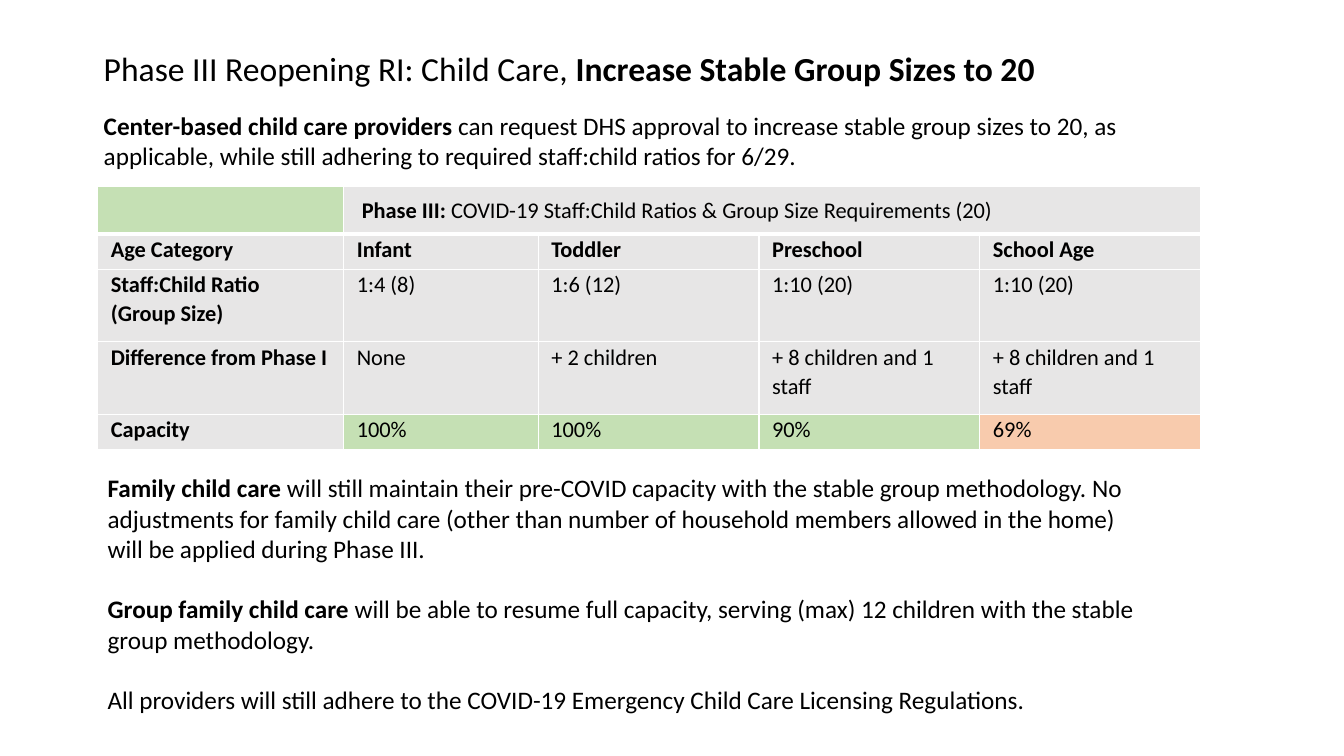
import pptx
import pptx.dml.color
import pptx.oxml
import pptx.oxml.ns
import pptx.util

Pt = pptx.util.Pt

GREEN = "C5E0B4"
GRAY = "E7E6E6"
ORANGE = "F8CBAD"
WHITE = "FFFFFF"
BLACK = "000000"

COLUMN_WIDTHS = [175.7, 139, 157.7, 157.7, 157.7]
ROW_HEIGHTS = [29.5, 25.2, 51.8, 51.8, 25.2]
RATIO_ROWS = [
    ["Age Category", "Infant", "Toddler", "Preschool", "School Age"],
    ["Staff:Child Ratio\n(Group Size)", "1:4 (8)", "1:6 (12)", "1:10 (20)", "1:10 (20)"],
    ["Difference from Phase I", "None", "+ 2 children",
     "+ 8 children and 1 staff", "+ 8 children and 1 staff"],
    ["Capacity", "100%", "100%", "90%", "69%"],
]
CAPACITY_FILLS = [GRAY, GREEN, GREEN, GREEN, ORANGE]


def color(value):
    return pptx.dml.color.RGBColor.from_string(value)


def add_run(paragraph, text, size=18, bold=False, fill=BLACK, font="Calibri"):
    run = paragraph.add_run()
    run.text = text
    run.font.name = font
    run.font.size = Pt(size)
    run.font.bold = bold
    run.font.color.rgb = color(fill)


def write_paragraphs(frame, paragraphs, size, line_spacing=None, gap=0):
    for index, runs in enumerate(paragraphs):
        paragraph = frame.add_paragraph() if index else frame.paragraphs[0]
        if line_spacing:
            paragraph.line_spacing = line_spacing
        if index and gap:
            paragraph.space_before = Pt(gap)
        for text, bold in runs:
            add_run(paragraph, text, size=size, bold=bold)


def add_text(slide, left, top, width, height, paragraphs, size=18, gap=0):
    shape = slide.shapes.add_textbox(Pt(left), Pt(top), Pt(width), Pt(height))
    shape.text_frame.word_wrap = True
    write_paragraphs(shape.text_frame, paragraphs, size, gap=gap)


def set_borders(cell, bottom_width):
    properties = cell._tc.get_or_add_tcPr()
    widths = {"lnL": 1, "lnR": 1, "lnT": 1, "lnB": bottom_width}
    for position, (side, width) in enumerate(widths.items()):
        border = pptx.oxml.parse_xml(
            f'<a:{side} {pptx.oxml.ns.nsdecls("a")} w="{Pt(width)}">'
            f'<a:solidFill><a:srgbClr val="{WHITE}"/></a:solidFill></a:{side}>')
        properties.insert(position, border)


def format_cell(cell, fill, paragraphs=(), margin_x=9.4, margin_y=0, bottom_width=1):
    cell.fill.solid()
    cell.fill.fore_color.rgb = color(fill)
    set_borders(cell, bottom_width)
    if paragraphs:
        cell.margin_left = cell.margin_right = Pt(margin_x)
        cell.margin_top = cell.margin_bottom = Pt(margin_y)
        write_paragraphs(cell.text_frame, paragraphs, 16, line_spacing=1.07)


def add_ratio_table(slide, left, top):
    frame = slide.shapes.add_table(
        len(ROW_HEIGHTS), len(COLUMN_WIDTHS), Pt(left), Pt(top),
        Pt(sum(COLUMN_WIDTHS)), Pt(sum(ROW_HEIGHTS)))
    table = frame.table
    for column, width in zip(table.columns, COLUMN_WIDTHS):
        column.width = Pt(width)
    for row, height in zip(table.rows, ROW_HEIGHTS):
        row.height = Pt(height)

    heading = [[("Phase III: ", True),
                ("COVID-19 Staff:Child Ratios & Group Size Requirements (20)", False)]]
    table.cell(0, 1).merge(table.cell(0, 4))
    format_cell(table.cell(0, 0), GREEN, bottom_width=3)
    format_cell(table.cell(0, 1), GRAY, heading, margin_x=13, margin_y=6.5, bottom_width=3)
    for column_index in range(2, len(COLUMN_WIDTHS)):
        format_cell(table.cell(0, column_index), GRAY, bottom_width=3)

    for row_index, values in enumerate(RATIO_ROWS, start=1):
        for column_index, value in enumerate(values):
            bold = row_index == 1 or column_index == 0
            is_capacity = row_index == len(RATIO_ROWS)
            fill = CAPACITY_FILLS[column_index] if is_capacity else GRAY
            paragraphs = [[(line, bold)] for line in value.split("\n")]
            format_cell(table.cell(row_index, column_index), fill, paragraphs)


def main():
    presentation = pptx.Presentation()
    presentation.slide_width = Pt(960)
    presentation.slide_height = Pt(540)
    slide = presentation.slides.add_slide(presentation.slide_layouts[6])

    add_ratio_table(slide, 69.8, 133.2)
    add_text(slide, 67, 31, 778.3, 36, [
        [("Phase III Reopening RI: Child Care, ", False),
         ("Increase Stable Group Sizes to 20", True)],
    ], size=24)
    add_text(slide, 69.8, 334.1, 763.2, 181.4, [
        [("Family child care ", True),
         ("will still maintain their pre-COVID capacity with the stable group "
          "methodology. No adjustments for family child care (other than number of "
          "household members allowed in the home) will be applied during Phase III.", False)],
        [("Group family child care ", True),
         ("will be able to resume full capacity, serving (max) 12 children with "
          "the stable group methodology.", False)],
        [("All providers will still adhere to the COVID-19 Emergency Child Care "
          "Licensing Regulations.", False)],
    ], gap=21.6)
    add_text(slide, 67, 74.9, 778.3, 51.1, [
        [("Center-based child care providers ", True),
         ("can request DHS approval to increase stable group sizes to 20, as "
          "applicable, while still adhering to required staff:child ratios for 6/29.", False)],
    ])
    presentation.save("out.pptx")


if __name__ == "__main__":
    main()
